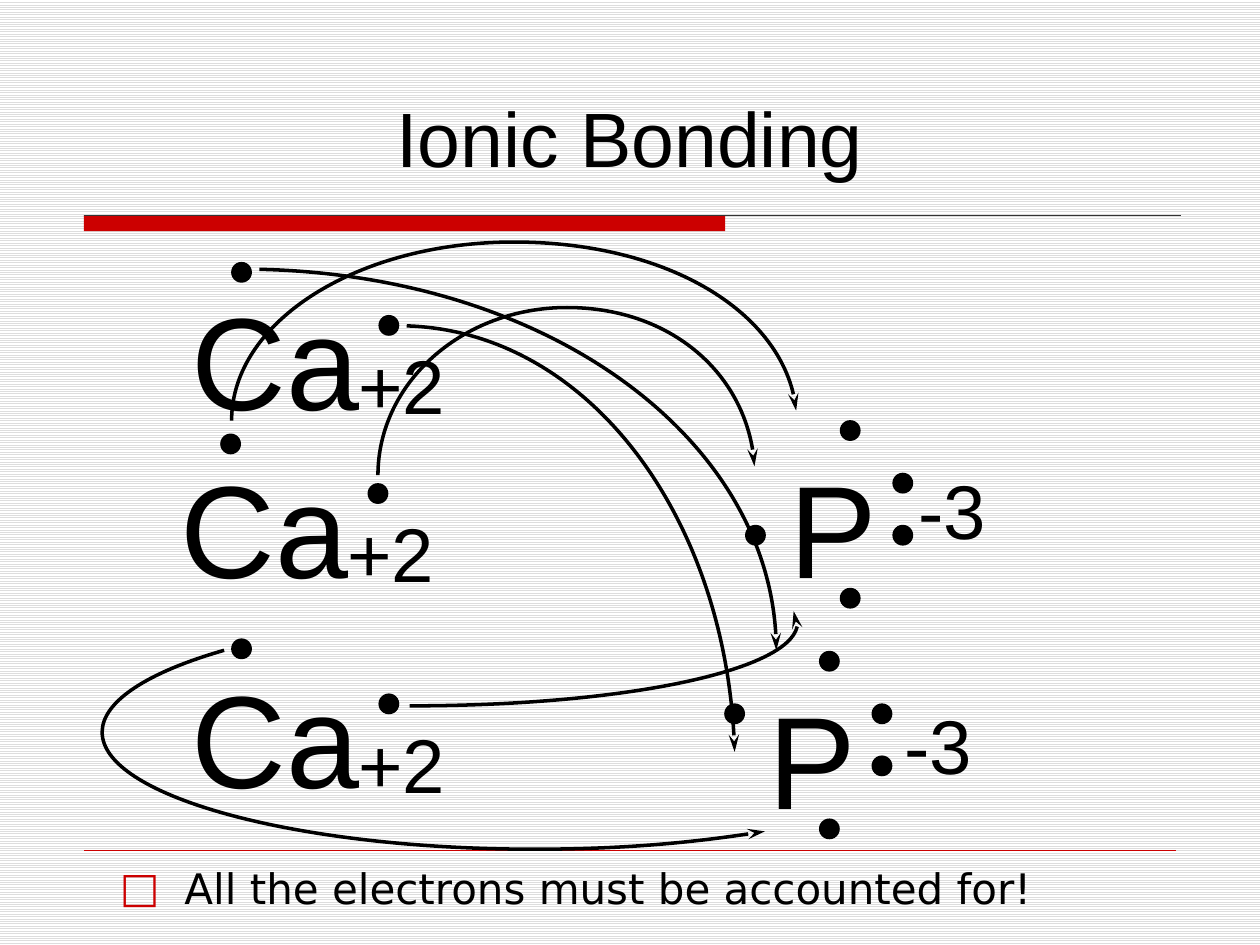
from lxml.etree import SubElement
from pptx import Presentation
from pptx.dml.color import RGBColor
from pptx.enum.dml import MSO_PATTERN
from pptx.enum.shapes import MSO_CONNECTOR, MSO_SHAPE
from pptx.enum.text import MSO_ANCHOR, MSO_AUTO_SIZE, PP_ALIGN
from pptx.oxml.ns import qn
from pptx.util import Cm, Pt

BLACK, RED, GRAY = "000000", "CC0000", "333333"
DOT = 0.42

CALCIUMS = [((3.61, 5.5), -0.22), ((3.39, 8.89), -0.15), ((3.61, 13.13), -0.26)]
PHOSPHORUSES = [
    ((15.66, 8.89), (18.26, 8.89), 1.69),
    ((15.24, 13.54), (17.98, 13.64), 0.64),
]
PHOSPHORUS_ELECTRONS = [(1.27, -0.42), (2.33, 0.64), (2.33, 1.69), (1.27, 2.96)]
TRANSFERS = [
    [(5.23, 5.43), (11.05, 5.56), (15.65, 8.97), (15.65, 13.11)],
    [(8.2, 6.57), (11.79, 6.68), (14.68, 10.46), (14.81, 15.16)],
    [(8.26, 14.23), (12.57, 14.23), (16.08, 13.49), (16.08, 12.55),
     (16.08, 12.47), (16.05, 12.4), (16, 12.32)],
    [(7.62, 9.58), (7.62, 7.72), (9.32, 6.2), (11.43, 6.2),
     (13.44, 6.2), (15.11, 7.59), (15.21, 9.4)],
    [(4.67, 8.48), (4.67, 6.48), (7.21, 4.88), (10.36, 4.88),
     (13.39, 4.88), (15.88, 6.38), (16.05, 8.28)],
    [(4.52, 13.11), (2.95, 13.56), (2.06, 14.15), (2.06, 14.76),
     (2.06, 16.05), (5.97, 17.12), (10.77, 17.12),
     (12.42, 17.12), (14.02, 16.99), (15.42, 16.76)],
]


def color(value):
    return RGBColor.from_string(value)


def add_text(slide, text, x, y, w, h, size=75, font="Arial", align=PP_ALIGN.LEFT,
             anchor=MSO_ANCHOR.TOP, before=0, wrap=True, baseline=None, bullet=None):
    box = slide.shapes.add_textbox(Cm(x), Cm(y), Cm(w), Cm(h))
    frame = box.text_frame
    frame.word_wrap = wrap
    frame.auto_size = MSO_AUTO_SIZE.NONE if bullet else MSO_AUTO_SIZE.SHAPE_TO_FIT_TEXT
    frame.vertical_anchor = anchor
    paragraph = frame.paragraphs[0]
    paragraph.alignment = align
    paragraph.space_before = Pt(before)
    run = paragraph.add_run()
    run.text = text
    run.font.size = Pt(size)
    run.font.name = font
    run.font.color.rgb = color(BLACK)
    if baseline:
        run._r.get_or_add_rPr().set("baseline", str(baseline * 1000))
    if bullet:
        props = paragraph._p.get_or_add_pPr()
        props.set("marL", str(Cm(1.3)))
        props.set("indent", str(-Cm(1.3)))
        SubElement(SubElement(props, qn("a:buClr")), qn("a:srgbClr"), val=RED)
        SubElement(props, qn("a:buFont"), typeface=font)
        SubElement(props, qn("a:buChar"), char=bullet)


def add_solid(shapes, kind, x, y, w, h, fill):
    solid = shapes.add_shape(kind, Cm(x), Cm(y), Cm(w), Cm(h))
    solid.shadow.inherit = False
    solid.fill.solid()
    solid.fill.fore_color.rgb = color(fill)
    solid.line.fill.background()


def add_electrons(shapes, atom, offsets):
    for dx, dy in offsets:
        add_solid(shapes, MSO_SHAPE.OVAL, atom[0] + dx, atom[1] + dy, DOT, DOT, BLACK)


def add_rule(slide, x1, x2, y, stroke, width):
    rule = slide.shapes.add_connector(MSO_CONNECTOR.STRAIGHT, Cm(x1), Cm(y), Cm(x2), Cm(y))
    rule.line.color.rgb = color(stroke)
    rule.line.width = Pt(width)
    SubElement(rule._element.spPr, qn("a:effectLst"))


def bend_segments(freeform):
    outline = next(freeform._element.iter(qn("a:path")))
    segments = outline.findall(qn("a:lnTo"))
    for first in range(0, len(segments), 3):
        curve = SubElement(outline, qn("a:cubicBezTo"))
        for segment in segments[first:first + 3]:
            curve.append(segment[0])
            outline.remove(segment)


def add_transfer(slide, controls):
    start, *others = [(Cm(x), Cm(y)) for x, y in controls]
    builder = slide.shapes.build_freeform(*start)
    builder.add_line_segments(others, close=False)
    transfer = builder.convert_to_shape()
    bend_segments(transfer)
    transfer.shadow.inherit = False
    transfer.fill.background()
    transfer.line.color.rgb = color(BLACK)
    transfer.line.width = Pt(2)
    SubElement(transfer.line._get_or_add_ln(), qn("a:tailEnd"),
               type="stealth", w="med", len="lg")


def add_calcium(slide, atom, top_dot):
    x, y = atom
    add_text(slide, "Ca", x, y, 6.55, 3.43, before=6)
    add_text(slide, "+2", x + 3.36, y + 0.88, 2.51, 2.36, wrap=False, baseline=30)
    add_electrons(slide.shapes, atom, [(1.05, top_dot), (4.02, 0.85)])


def add_phosphorus(slide, atom, charge, left_dot):
    add_text(slide, "P", *atom, 4.25, 3.43, before=19.7)
    add_text(slide, "-3", *charge, 2.08, 2.36, wrap=False, baseline=30)
    shell = slide.shapes.add_group_shape()
    add_electrons(shell.shapes, atom, PHOSPHORUS_ELECTRONS + [(-0.64, left_dot)])


def add_background(slide):
    fill = slide.background.fill
    fill.patterned()
    fill.pattern = MSO_PATTERN.LIGHT_HORIZONTAL
    fill.fore_color.rgb = color("DDDDDD")
    fill.back_color.rgb = color("FFFFFF")


def main():
    deck = Presentation()
    deck.slide_width, deck.slide_height = Cm(25.4), Cm(19.05)
    slide = deck.slides.add_slide(deck.slide_layouts[6])
    add_background(slide)
    add_solid(slide.shapes, MSO_SHAPE.RECTANGLE, 1.69, 4.34, 12.93, 0.32, RED)
    add_rule(slide, 1.69, 23.8, 4.34, GRAY, 0.75)
    add_rule(slide, 1.69, 23.7, 17.14, RED, 0.25)
    add_text(slide, "Ionic Bonding", 1.9, 1.7, 21.6, 2.11, size=44,
             align=PP_ALIGN.CENTER, anchor=MSO_ANCHOR.BOTTOM)
    for atom, top_dot in CALCIUMS:
        add_calcium(slide, atom, top_dot)
    for atom, charge, left_dot in PHOSPHORUSES:
        add_phosphorus(slide, atom, charge, left_dot)
    for controls in TRANSFERS:
        add_transfer(slide, controls)
    add_text(slide, "All the electrons must be accounted for!", 2.17, 17.27, 21.6, 1.7,
             size=24, font="DejaVu Sans", before=1, bullet="□")
    deck.save("out.pptx")


if __name__ == "__main__":
    main()
